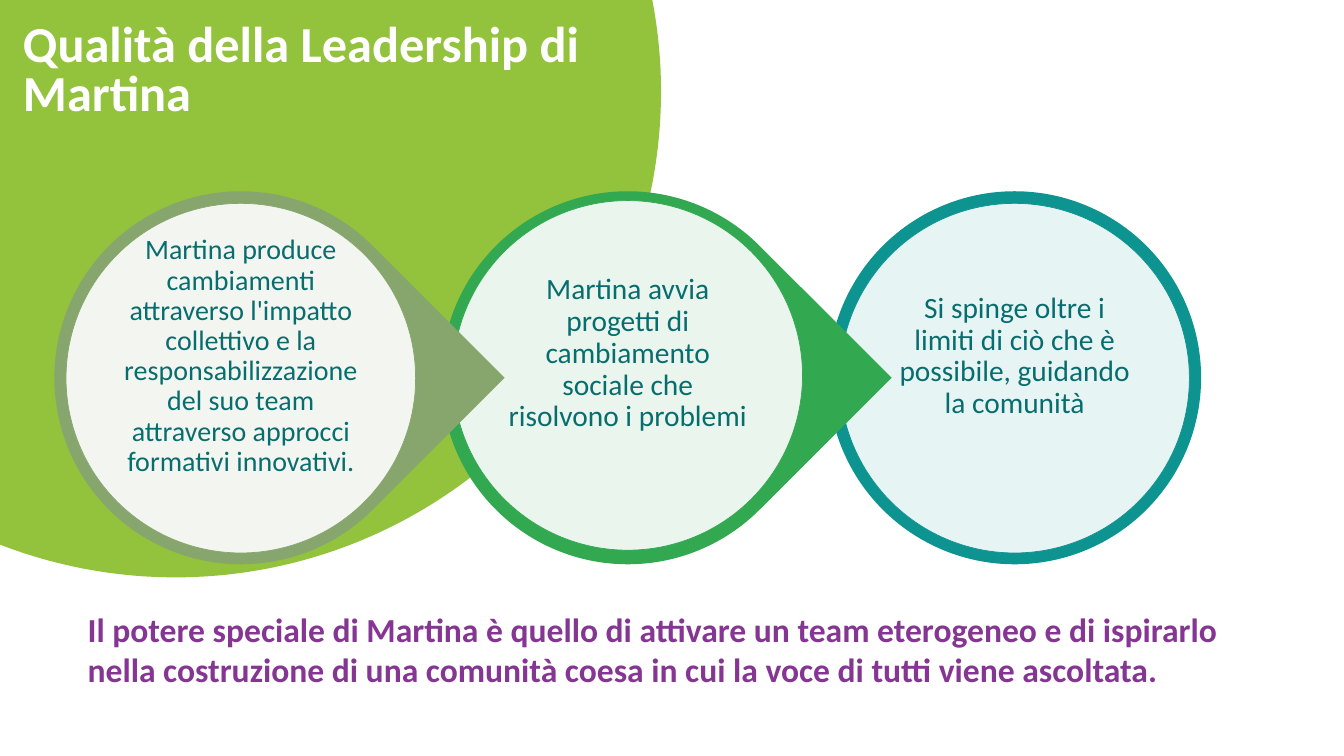
"""Build the slide on Martina's leadership qualities."""
import math

from lxml import etree
from pptx import Presentation
from pptx import util as u
from pptx.dml.color import RGBColor
from pptx.enum import shapes, text
from pptx.oxml.ns import qn

COLORS = {
    "lime": "93C23D", "sage": "87A66E", "green": "32A851", "teal": "0D9390",
    "dark_teal": "086D6E", "purple": "853693", "white": "FFFFFF",
}


def add_text(box, wording, size, color, bold=False):
    """Write one formatted paragraph in a box and return it."""
    frame = box.text_frame
    frame.word_wrap = True
    frame.text = wording
    paragraph = frame.paragraphs[0]
    font = paragraph.runs[0].font
    font.name, font.size, font.bold = "Calibri", u.Pt(size), bold
    font.color.rgb = RGBColor.from_string(COLORS[color])
    return paragraph


def paint(shape, fill, line=None):
    """Give a shape a flat fill and an optional thin outline."""
    shape.shadow.inherit = False
    shape.fill.solid()
    shape.fill.fore_color.rgb = RGBColor.from_string(COLORS[fill])
    if line:
        shape.line.color.rgb = RGBColor.from_string(COLORS[line])
        shape.line.width = u.Pt(0.5)
    else:
        shape.line.fill.background()


presentation = Presentation()
presentation.slide_width, presentation.slide_height = u.Cm(33.87), u.Cm(19.05)
slide = presentation.slides.add_slide(presentation.slide_layouts[6])

disc_x, disc_y, disc_radius = 4.42, 2.31, 12.24
start = -math.asin(disc_y / disc_radius)
end = math.pi - math.acos(disc_x / disc_radius)
steps = 120
arc = []
for step in range(steps + 1):
    angle = start + (end - start) * step / steps
    arc.append((u.Cm(disc_x + disc_radius * math.cos(angle)),
                u.Cm(disc_y + disc_radius * math.sin(angle))))
builder = slide.shapes.build_freeform(0, 0)
builder.add_line_segments(arc, close=True)
paint(builder.convert_to_shape(), "lime")

title = slide.shapes.add_textbox(u.Cm(0.33), u.Cm(0.48), u.Cm(15.95), u.Cm(2.87))
add_text(title, "Qualità della Leadership di Martina", 36, "white", True).line_spacing = 0.8

TEARDROP, OVAL = shapes.MSO_SHAPE.TEAR, shapes.MSO_SHAPE.OVAL
first_x, pitch, center_y = 6.07, 9.75, 9.52
ring_size, circle_size, text_size = 9.4, 8.81, 6.3
qualities = [
    (TEARDROP, "sage", 9.53, 20,
     "Martina produce cambiamenti attraverso l'impatto collettivo e la "
     "responsabilizzazione del suo team attraverso approcci formativi innovativi."),
    (TEARDROP, "green", 9.46, 21,
     "Martina avvia progetti di cambiamento sociale che risolvono i problemi"),
    (OVAL, "teal", 9.53, 21,
     "Si spinge oltre i limiti di ciò che è possibile, guidando la comunità"),
]
for index, (outline, color, circle_y, size, wording) in reversed(list(enumerate(qualities))):
    center_x = first_x + index * pitch
    ring = slide.shapes.add_shape(
        outline, u.Cm(center_x - ring_size / 2), u.Cm(center_y - ring_size / 2),
        u.Cm(ring_size), u.Cm(ring_size))
    paint(ring, color)
    if outline == TEARDROP:
        ring.rotation = 45

    circle = slide.shapes.add_shape(
        OVAL, u.Cm(center_x - circle_size / 2), u.Cm(circle_y - circle_size / 2),
        u.Cm(circle_size), u.Cm(circle_size))
    paint(circle, "white", color)
    white = circle.fill._xPr.find(qn("a:solidFill"))[0]
    etree.SubElement(white, qn("a:alpha")).set("val", "90000")

    label = slide.shapes.add_textbox(
        u.Cm(center_x - text_size / 2), u.Cm(circle_y - text_size / 2),
        u.Cm(text_size), u.Cm(text_size))
    frame = label.text_frame
    frame.vertical_anchor = text.MSO_ANCHOR.MIDDLE
    frame.margin_left = frame.margin_right = frame.margin_top = u.Cm(0.08)
    frame.margin_bottom = u.Cm(1.17)
    paragraph = add_text(label, wording, size, "dark_teal")
    paragraph.alignment = text.PP_ALIGN.CENTER
    paragraph.line_spacing = 0.9

closing = slide.shapes.add_textbox(u.Cm(1.96), u.Cm(15.21), u.Cm(30.71), u.Cm(2.31))
add_text(closing, "Il potere speciale di Martina è quello di attivare un team eterogeneo e di "
         "ispirarlo nella costruzione di una comunità coesa in cui la voce di tutti viene "
         "ascoltata.", 24, "purple", True)

presentation.save("out.pptx")
